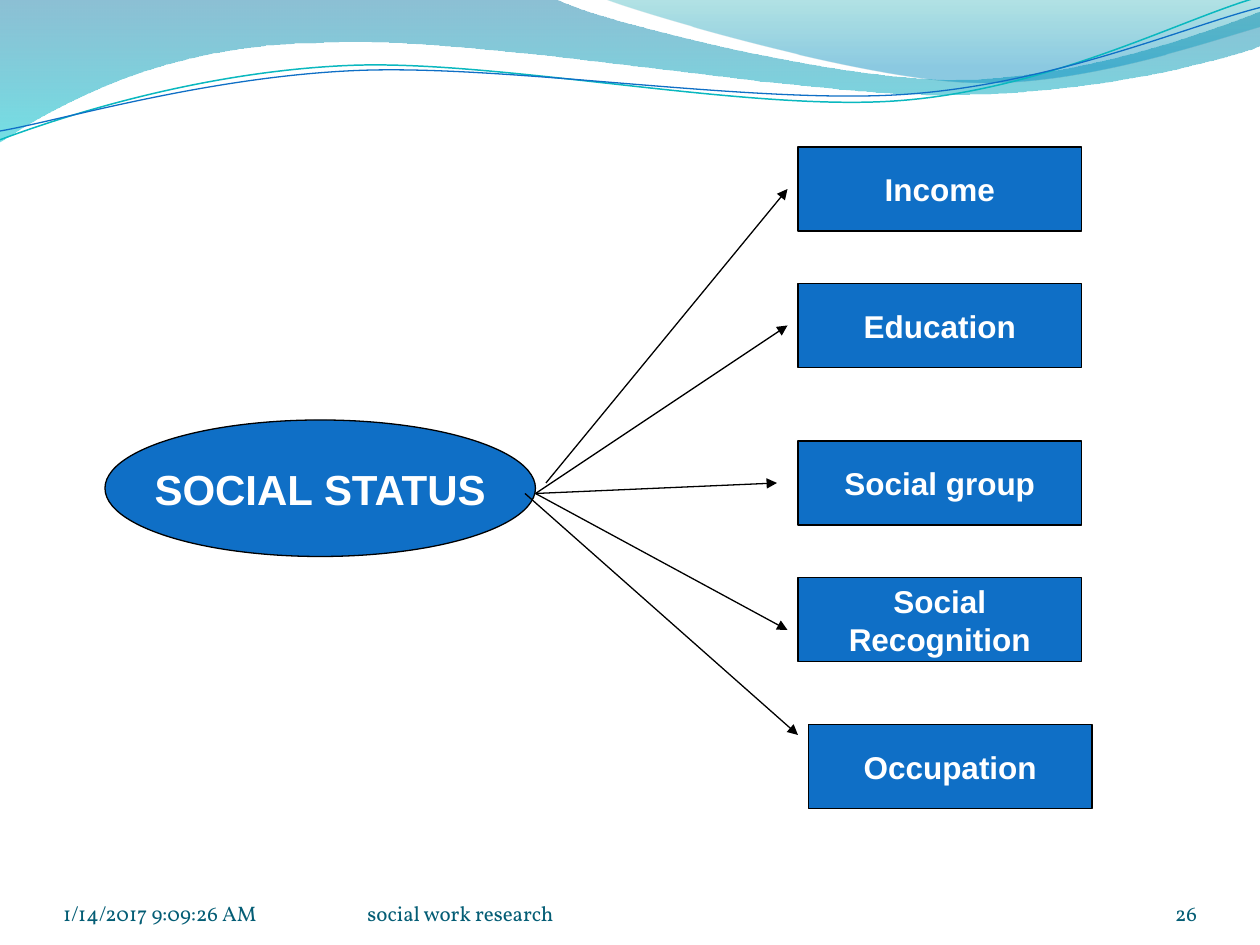
from lxml import etree
from pptx import Presentation
from pptx.dml.color import RGBColor
from pptx.enum.shapes import MSO_CONNECTOR, MSO_SHAPE
from pptx.enum.text import MSO_ANCHOR, PP_ALIGN
from pptx.oxml.ns import qn
from pptx.util import Inches, Pt

RECT, OVAL, STRAIGHT = MSO_SHAPE.RECTANGLE, MSO_SHAPE.OVAL, MSO_CONNECTOR.STRAIGHT
LEFT, CENTER, RIGHT = PP_ALIGN.LEFT, PP_ALIGN.CENTER, PP_ALIGN.RIGHT
MIDDLE, BOTTOM = MSO_ANCHOR.MIDDLE, MSO_ANCHOR.BOTTOM

THEME = {
    "blue": RGBColor.from_string("0F6FC6"),
    "black": RGBColor.from_string("000000"),
    "line": Pt(0.75),
    "deep wave": [(0, "0074A1", 45), (1, "00C6CF", 55)],
    "light wave": [(0, "00A1A9", 30), (0.8, "008BBF", 45)],
    "teal stroke": ("0AB8BF", 0.85),
    "blue stroke": ("0F6FC6", 0.75),
    "hub": {"name": "Arial", "size": Pt(24), "bold": True, "color": "FFFFFF"},
    "factor": {"name": "Arial", "size": Pt(18), "bold": True, "color": "FFFFFF"},
    "footer": {"name": "Vollkorn", "size": Pt(12), "bold": False, "color": "045D75"},
}

prs = Presentation()
prs.slide_width, prs.slide_height = Inches(10), Inches(7.5)
s = prs.slides.add_slide(prs.slide_layouts[6])
U = prs.slide_width / 120  # grid of 120 columns by 90 rows


def grid(*cells):
    return [round(c * U) for c in cells]


def write(sp, text, style, align, anchor, wrap):
    tf = sp.text_frame
    tf.text = text
    for name, value in {"word_wrap": wrap, "vertical_anchor": anchor}.items():
        setattr(tf, name, value)
    for p in tf.paragraphs:
        p.alignment = align
        font = p.runs[0].font
        for name in ("name", "size", "bold"):
            setattr(font, name, THEME[style][name])
        font.color.rgb = RGBColor.from_string(THEME[style]["color"])


# Header waves in inches: a start, then end points (2 numbers) or curves (6 numbers)
waves = [
    ("deep wave", (0, -0.01), [
        (4.4, -0.01), (4.76, 0.17, 6.64, 0.63, 7.58, 0.63),
        (8.53, 0.63, 9.58, 0.26, 10, 0.09), (10.01, 0.36),
        (9.83, 0.44, 8.7, 0.76, 7.46, 0.75), (6.22, 0.75, 3.82, 0.28, 2.57, 0.34),
        (1.29, 0.35, 0.46, 0.83, -0.01, 1.13), (0, -0.01)]),
    ("light wave", (4.79, -0.01), [
        (5.09, 0.11, 6.82, 0.62, 7.69, 0.65), (8.56, 0.69, 9.61, 0.32, 10, 0.21),
        (10, 0), (4.79, -0.01)]),
    ("teal stroke", (0, 1.11), [
        (0.48, 0.93, 1.58, 0.57, 2.77, 0.52), (3.95, 0.47, 5.93, 0.89, 7.13, 0.8),
        (8.33, 0.71, 9.38, 0.15, 9.98, -0.02)]),
    ("blue stroke", (0, 1.04), [
        (0.47, 0.96, 1.64, 0.61, 2.83, 0.56), (4.03, 0.51, 5.97, 0.83, 7.17, 0.75),
        (8.36, 0.67, 9.41, 0.21, 10, 0.06)]),
]
for look, start, segments in waves:
    filled = look.endswith("wave")
    builder = s.shapes.build_freeform(*map(Inches, start))
    builder.add_line_segments([tuple(map(Inches, seg[-2:])) for seg in segments], close=filled)
    sp = builder.convert_to_shape()
    sp.shadow.inherit = False

    # Turn the straight segments with control points into curves
    for edge, seg in zip(list(sp.element.iter(qn("a:lnTo"))), segments):
        if len(seg) == 6:
            edge.tag = qn("a:cubicBezTo")
            controls = zip(seg[0:4:2], seg[1:4:2])
            for i, (x, y) in enumerate(controls):
                pt = etree.Element(qn("a:pt"), x=str(Inches(x) - sp.left),
                                   y=str(Inches(y) - sp.top))
                edge.insert(i, pt)

    if filled:
        sp.line.fill.background()
        sp.fill.gradient()
        sp.fill.gradient_angle = 270
        for stop, (position, color, _) in zip(sp.fill.gradient_stops, THEME[look]):
            stop.position = position
            stop.color.rgb = RGBColor.from_string(color)
        for clr, (_, _, opacity) in zip(sp.element.spPr.iter(qn("a:srgbClr")), THEME[look]):
            etree.SubElement(clr, qn("a:alpha"), val=str(opacity * 1000))
    else:
        color, width = THEME[look]
        sp.fill.background()
        sp.line.color.rgb = RGBColor.from_string(color)
        sp.line.width = Pt(width)

# Hub and its factors: shape, text, style, column, row, columns, rows
factors = [("Income", 76, 14), ("Education", 76, 27), ("Social group", 76, 42),
           ("Social\nRecognition", 76, 55), ("Occupation", 77, 69)]
nodes = [(OVAL, "SOCIAL STATUS", "hub", 10, 40, 41, 13)]
nodes += [(RECT, text, "factor", col, row, 27, 8) for text, col, row in factors]
for kind, text, style, *cells in nodes:
    sp = s.shapes.add_shape(kind, *grid(*cells))
    sp.shadow.inherit = False
    sp.fill.solid()
    sp.fill.fore_color.rgb = THEME["blue"]
    sp.line.color.rgb = THEME["black"]
    sp.line.width = THEME["line"]
    write(sp, text, style, CENTER, MIDDLE, False)

# Arrows from the hub to each factor
arrows = [(52, 46, 75, 18), (51, 47, 75, 31), (51, 47, 74, 46),
          (51, 47, 75, 60), (50, 47, 76, 70)]
for ends in arrows:
    arrow = s.shapes.add_connector(STRAIGHT, *grid(*ends))
    arrow.line.color.rgb = THEME["black"]
    arrow.line.width = THEME["line"]
    spPr = arrow.element.spPr
    etree.SubElement(spPr.find(qn("a:ln")), qn("a:tailEnd"), type="triangle")
    etree.SubElement(spPr, qn("a:effectLst"))

# Footer: date, slide number, name
for text, col, cols, align in [("1/14/2017 9:09:26 AM", 6, 28, LEFT),
                               ("26", 104, 10, RIGHT),
                               ("social work research", 35, 44, LEFT)]:
    box = s.shapes.add_textbox(*grid(col, 83.4, cols, 4.8))
    write(box, text, "footer", align, BOTTOM, True)
    for side in ("left", "top", "right", "bottom"):
        setattr(box.text_frame, f"margin_{side}", 0)

prs.save("out.pptx")
